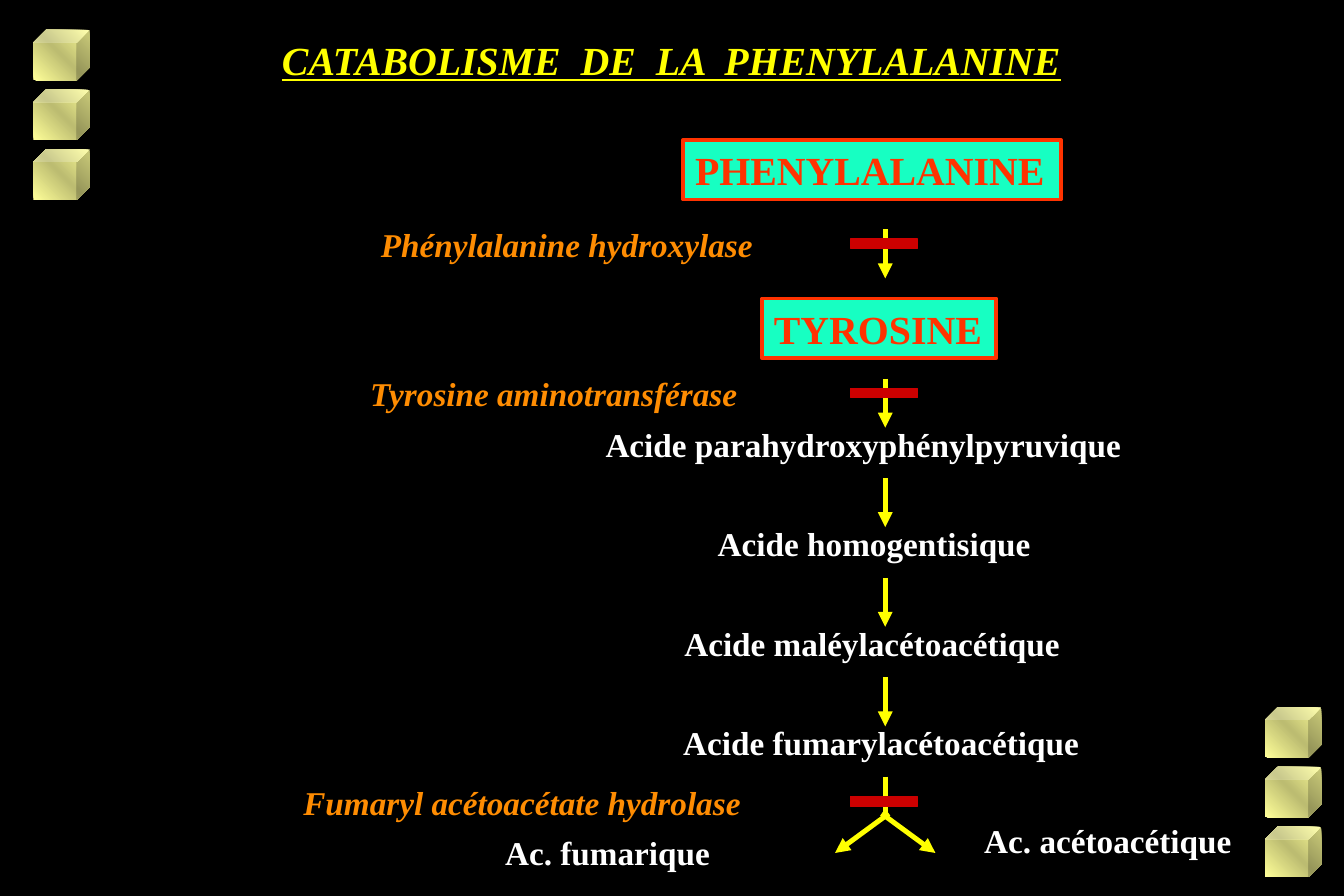
from copy import deepcopy

from pptx import Presentation
from pptx.dml.color import RGBColor
from pptx.enum.shapes import MSO_CONNECTOR, MSO_SHAPE
from pptx.enum.text import MSO_ANCHOR, MSO_AUTO_SIZE, PP_ALIGN
from pptx.oxml.ns import qn
from pptx.util import Inches, Pt

HUES = {
    "black": "000000", "white": "FFFFFF", "yellow": "FFFF00",
    "orange": "FE8C02", "red": "FF3300", "block": "CC0000",
    "mint": "17FFC2", "pale": "FFFF99", "olive": "BCBC71",
}
FONT = "Times New Roman"
AXIS = 7.41
STEP = 5 / 6


def hue(name):
    """Return the named colour."""
    return RGBColor.from_string(HUES[name])


def write(frame, text, size=20, color="white", bold=True, italic=False,
          under=False, align=PP_ALIGN.LEFT, anchor=MSO_ANCHOR.TOP,
          wrap=False, fit=MSO_AUTO_SIZE.SHAPE_TO_FIT_TEXT):
    """Put formatted text into a text frame."""
    frame.word_wrap = wrap
    frame.auto_size = fit
    frame.vertical_anchor = anchor
    line = frame.paragraphs[0]
    line.alignment = align
    run = line.add_run()
    run.text = text
    font = run.font
    font.name, font.size = FONT, Pt(size)
    font.bold, font.italic, font.underline = bold, italic, under
    font.color.rgb = hue(color)


def label(slide, text, left, top, width, **style):
    """Add a one-line text box."""
    box = slide.shapes.add_textbox(
        Inches(left), Inches(top), Inches(width), Inches(0.44))
    write(box.text_frame, text, **style)


def block(slide, left, top, width, height, fill, edge, weight):
    """Add a filled rectangle with an outline."""
    shape = slide.shapes.add_shape(
        MSO_SHAPE.RECTANGLE, Inches(left), Inches(top),
        Inches(width), Inches(height))
    shape.shadow.inherit = False
    shape.fill.solid()
    shape.fill.fore_color.rgb = hue(fill)
    shape.line.color.rgb = hue(edge)
    shape.line.width = Pt(weight)
    return shape


def cube(slide, left, top):
    """Add a shaded cube."""
    shape = slide.shapes.add_shape(
        MSO_SHAPE.CUBE, Inches(left), Inches(top), Inches(0.47), Inches(0.42))
    shape.shadow.inherit = False
    shape.line.fill.background()
    shape.fill.gradient()
    shape.fill.gradient_angle = 45
    stops = next(shape.element.iter(qn("a:gsLst")))
    stops.append(deepcopy(stops[0]))
    tones = [(0, "pale"), (0.5, "olive"), (1, "pale")]
    for stop, (place, tone) in zip(shape.fill.gradient_stops, tones):
        stop.position = place
        stop.color.rgb = hue(tone)


def arrow(slide, start, end, head=True):
    """Add a yellow line, with an arrowhead at its end if wanted."""
    link = slide.shapes.add_connector(
        MSO_CONNECTOR.STRAIGHT, *(Inches(n) for n in (*start, *end)))
    link.line.color.rgb = hue("yellow")
    link.line.width = Pt(3)
    if head:
        tip = link.line._get_or_add_ln()
        tip.append(tip.makeelement(qn("a:tailEnd"), {"type": "triangle"}))
    props = link.element.spPr
    props.append(props.makeelement(qn("a:effectLst"), {}))


def title(slide, text):
    """Place and fill the slide title."""
    shape = slide.shapes.title
    shape.left, shape.top = Inches(0.84), Inches(0.25)
    shape.width, shape.height = Inches(9.56), Inches(0.5)
    write(shape.text_frame, text, size=24, color="yellow", italic=True,
          under=True, align=PP_ALIGN.CENTER, anchor=MSO_ANCHOR.MIDDLE,
          wrap=True, fit=MSO_AUTO_SIZE.NONE)


def main():
    """Build the slide and save it."""
    deck = Presentation()
    deck.slide_width, deck.slide_height = Inches(11.25), Inches(7.5)
    slide = deck.slides.add_slide(deck.slide_layouts[5])
    slide.background.fill.solid()
    slide.background.fill.fore_color.rgb = hue("black")

    for left, top in ((0.28, 0.25), (10.59, 5.92)):
        for row in range(3):
            cube(slide, left, top + row * 0.5)
    title(slide, "CATABOLISME  DE  LA  PHENYLALANINE")

    for text, left, top, width in (("PHENYLALANINE", 5.72, 1.17, 3.16),
                                   ("TYROSINE", 6.38, 2.5, 1.96)):
        shape = block(slide, left, top, width, 0.5, "mint", "red", 2.25)
        write(shape.text_frame, text, size=24, color="red")

    acids = [
        ("Acide parahydroxyphénylpyruvique", 4.97, 4.55),
        ("Acide homogentisique", 5.91, 2.84),
        ("Acide maléylacétoacétique", 5.63, 3.37),
        ("Acide fumarylacétoacétique", 5.62, 3.54),
    ]
    for row, (text, left, width) in enumerate(acids):
        label(slide, text, left, 3.5 + row * STEP, width)
    label(slide, "Ac. fumarique", 4.13, 6.92, 1.93)
    label(slide, "Ac. acétoacétique", 8.14, 6.82, 2.29, wrap=True)

    for top in (1.92, *(3.17 + row * STEP for row in range(4))):
        arrow(slide, (AXIS, top), (AXIS, top + 0.41))
    arrow(slide, (AXIS, 6.5), (AXIS, 6.83), head=False)
    for side in (-1, 1):
        arrow(slide, (AXIS - side * 0.03, 6.81), (AXIS + side * 0.42, 7.14))

    enzymes = [
        ("Phénylalanine hydroxylase", 3.09, 1.83, 3.34, 2),
        ("Tyrosine aminotransférase", 3, 3.08, 3.29, 3.25),
        ("Fumaryl acétoacétate hydrolase", 2.44, 6.5, 3.89, 6.67),
    ]
    for text, left, top, width, bar in enzymes:
        block(slide, 7.12, bar, 0.56, 0.08, "block", "block", 0.75)
        label(slide, text, left, top, width, color="orange", italic=True)

    deck.save("out.pptx")


if __name__ == "__main__":
    main()
